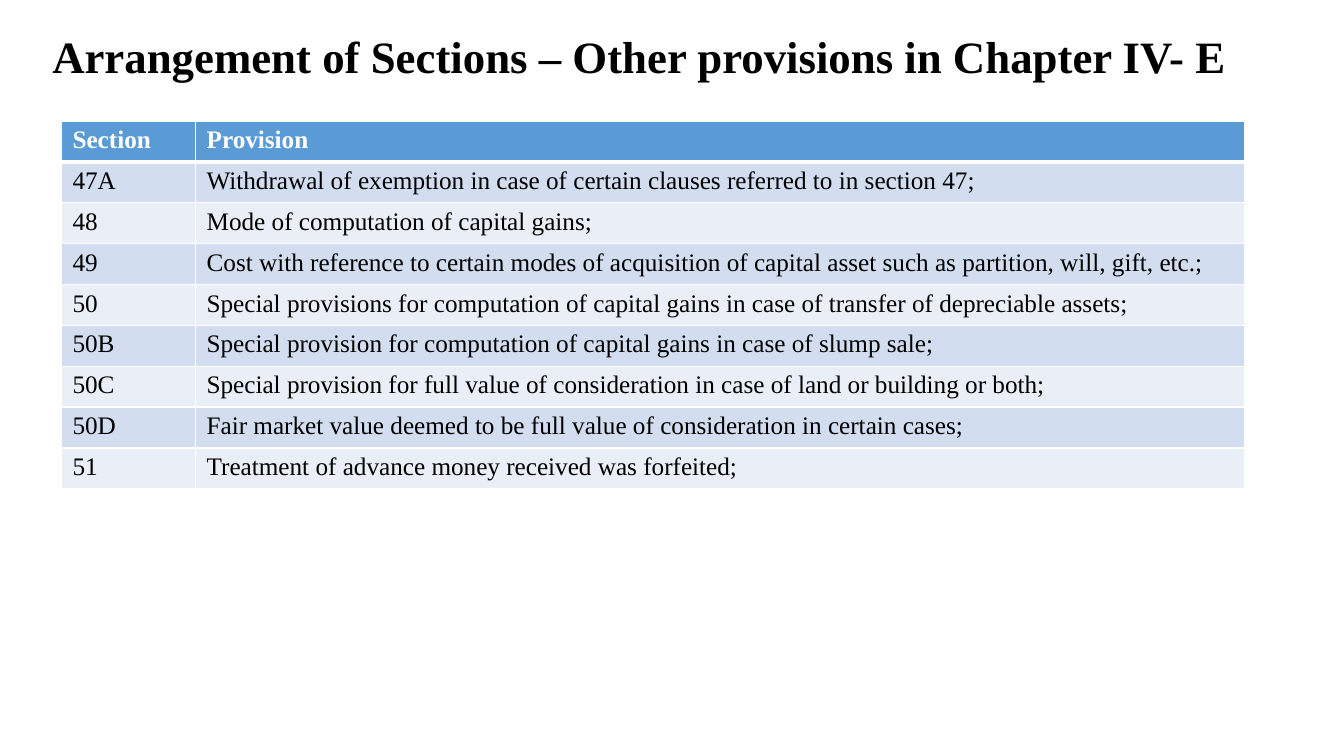
from lxml.etree import SubElement
from pptx import Presentation
from pptx.dml.color import RGBColor
from pptx.enum.text import MSO_ANCHOR, PP_ALIGN
from pptx.oxml.ns import qn
from pptx.util import Inches, Pt

FONT = "Times New Roman"
HUES = {"head": "5B9BD5", "odd": "D2DEEF", "even": "EAEFF7",
        "dark": "000000", "light": "FFFFFF"}
ROWS = [
    ("Section", "Provision"),
    ("47A", "Withdrawal of exemption in case of certain clauses referred to in section 47;"),
    ("48", "Mode of computation of capital gains;"),
    ("49", "Cost with reference to certain modes of acquisition of capital asset such as partition, will, gift, etc.;"),
    ("50", "Special provisions for computation of capital gains in case of transfer of depreciable assets;"),
    ("50B", "Special provision for computation of capital gains in case of slump sale;"),
    ("50C", "Special provision for full value of consideration in case of land or building or both;"),
    ("50D", "Fair market value deemed to be full value of consideration in certain cases;"),
    ("51", "Treatment of advance money received was forfeited;"),
]


def style(para, size, hue, bold):
    font = para.font
    font.name, font.size, font.bold = FONT, Pt(size), bold
    font.color.rgb = RGBColor.from_string(HUES[hue])


def rule(cell, side, width):
    # Borders come before the fill, so call this before setting it
    line = SubElement(cell._tc.get_or_add_tcPr(), qn("a:" + side), w=str(Pt(width)))
    fill = SubElement(line, qn("a:solidFill"))
    SubElement(fill, qn("a:srgbClr"), val=HUES["light"])


deck = Presentation()
deck.slide_width, deck.slide_height = Inches(13.33), Inches(7.5)
slide = deck.slides.add_slide(deck.slide_layouts[6])

# Title
box = slide.shapes.add_textbox(Inches(0.42), Inches(0.11), Inches(11.92), Inches(0.95))
frame = box.text_frame
frame.word_wrap = True
frame.vertical_anchor = MSO_ANCHOR.MIDDLE
title = frame.paragraphs[0]
title.text = "Arrangement of Sections – Other provisions in Chapter IV- E"
title.line_spacing = 0.9
style(title, 32, "dark", True)

# Table of sections
wide = [Inches(1.33), Inches(10.4)]
high = Inches(3.65) // len(ROWS)
grid = slide.shapes.add_table(len(ROWS), len(wide), Inches(0.61), Inches(1.2),
                              sum(wide), high * len(ROWS))
table = grid.table
for col, width in zip(table.columns, wide):
    col.width = width

for r, texts in enumerate(ROWS):
    band = "head" if r == 0 else "odd" if r % 2 else "even"
    for c, text in enumerate(texts):
        cell = table.cell(r, c)
        cell.margin_left = cell.margin_right = Inches(0.11)
        for side in ("lnL", "lnR", "lnT", "lnB"):
            thick = (r, side) in ((0, "lnB"), (1, "lnT"))
            rule(cell, side, 3 if thick else 1)
        cell.fill.solid()
        cell.fill.fore_color.rgb = RGBColor.from_string(HUES[band])
        para = cell.text_frame.paragraphs[0]
        para.text = text
        para.alignment = PP_ALIGN.JUSTIFY if c else PP_ALIGN.LEFT
        style(para, 18, "dark" if r else "light", r == 0)

deck.save("out.pptx")
